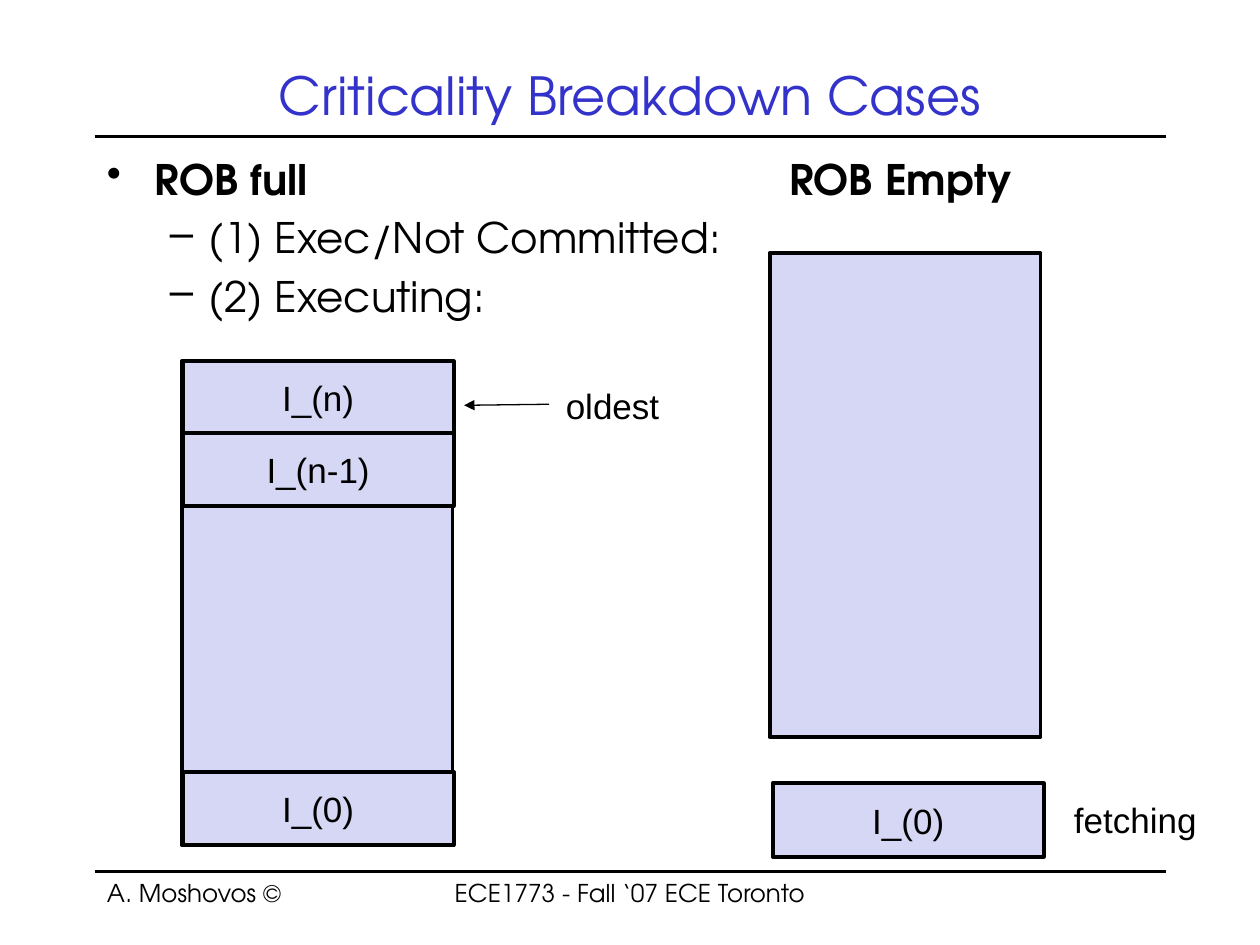
from lxml import etree
from pptx import Presentation
from pptx import util as u
from pptx.dml.color import RGBColor
from pptx.enum import shapes, text
from pptx.oxml.ns import qn

BLACK = RGBColor(0x00, 0x00, 0x00)
BLUE = RGBColor(0x33, 0x33, 0xCC)
LILAC = RGBColor(0xD6, 0xD6, 0xF5)
HEAD, BODY = "TeX Gyre Adventor", "Arial"
COLS, ROWS = 120, 90
LEFT, RIGHT, WIDTH = 9, 111, 102
BOX_W, BOX_H, ROB_H = 25.8, 7, 46.1
CENTER, MIDDLE = text.PP_ALIGN.CENTER, text.MSO_ANCHOR.MIDDLE


def write(p, words, size=20, font=BODY, color=BLACK, bold=False, align=None):
    """Add one formatted run to a paragraph."""
    r = p.add_run()
    r.text = words
    r.font.size, r.font.name, r.font.bold = u.Pt(size), font, bold
    r.font.color.rgb = color
    p.alignment = align


class Deck:
    """Hold the style and the current slide, measured on a 120 by 90 grid."""

    def __init__(self):
        self.prs = Presentation()
        self.prs.slide_width, self.prs.slide_height = u.Inches(10), u.Inches(7.5)
        self.s = self.prs.slides.add_slide(self.prs.slide_layouts[6])

    def grid(self, *cells):
        """Turn alternating columns and rows into lengths."""
        spans = (self.prs.slide_width / COLS, self.prs.slide_height / ROWS)
        return [u.Emu(round(c * spans[i % 2])) for i, c in enumerate(cells)]

    def line(self, x1, y1, x2, y2, weight=2.25, arrow=False):
        """Draw a straight line, with an arrowhead at its end if asked."""
        sp = self.s.shapes.add_connector(
            shapes.MSO_CONNECTOR.STRAIGHT, *self.grid(x1, y1, x2, y2))
        sp.line.color.rgb, sp.line.width = BLACK, u.Pt(weight)
        if arrow:
            etree.SubElement(sp.line._get_or_add_ln(), qn("a:tailEnd"), type="triangle")
        etree.SubElement(sp._element.spPr, qn("a:effectLst"))

    def box(self, x, y, w=BOX_W, h=BOX_H, label=None):
        """Draw a filled rectangle with an optional centred label."""
        sp = self.s.shapes.add_shape(shapes.MSO_SHAPE.RECTANGLE, *self.grid(x, y, w, h))
        sp.shadow.inherit = False
        sp.fill.solid()
        sp.fill.fore_color.rgb = LILAC
        sp.line.color.rgb, sp.line.width = BLACK, u.Pt(2.25)
        if label:
            sp.text_frame.vertical_anchor = MIDDLE
            write(sp.text_frame.paragraphs[0], label, align=CENTER)

    def frame(self, x, y, w, h, wrap=True, anchor=text.MSO_ANCHOR.TOP):
        """Add an empty text box and return its text frame."""
        tf = self.s.shapes.add_textbox(*self.grid(x, y, w, h)).text_frame
        tf.word_wrap, tf.vertical_anchor = wrap, anchor
        return tf

    def text(self, x, y, w, h, words, wrap=True, anchor=text.MSO_ANCHOR.TOP, **style):
        """Add a text box of one paragraph."""
        p = self.frame(x, y, w, h, wrap, anchor).paragraphs[0]
        write(p, words, **style)
        return p

    def bullets(self, x, y, w, h, items):
        """Add a bulleted list of level and text pairs."""
        tf = self.frame(x, y, w, h)
        for i, (level, words) in enumerate(items):
            p = tf.add_paragraph() if i else tf.paragraphs[0]
            mark, margin, indent = (("•", 0.38, -0.38), ("–", 0.81, -0.31))[level]
            p.level, p.space_before = level, u.Pt(4.8)
            pPr = p._p.get_or_add_pPr()
            pPr.set("marL", str(u.Inches(margin)))
            pPr.set("indent", str(u.Inches(indent)))
            etree.SubElement(pPr, qn("a:buChar"), char=mark)
            write(p, words, size=24, font=HEAD, bold=level == 0)

    def save(self):
        """Save the presentation."""
        self.prs.save("out.pptx")


def main():
    """Build the slide on reorder buffer cases."""
    d = Deck()
    for y in (13, 83):
        d.line(LEFT, y, RIGHT, y)
    d.text(LEFT, 5, WIDTH, 8, "Criticality Breakdown Cases", anchor=MIDDLE,
           size=30, font=HEAD, color=BLUE, align=CENTER)
    d.bullets(LEFT, 14, 65, 24, [
        (0, "ROB full"), (1, "(1) Exec/Not Committed:"), (1, "(2) Executing:")])
    p = d.text(74, 14, 37, 6, "ROB Empty", size=24, font=HEAD, bold=True)
    p.space_before = u.Pt(4.8)
    d.text(LEFT, 83, 25, 5, "A. Moshovos ©", size=14, font=HEAD)
    d.text(39, 83, 42, 5, "ECE1773 - Fall ‘07 ECE Toronto",
           size=14, font=HEAD, align=CENTER)

    full_x, full_y = 17.3, 34.4
    d.box(full_x, full_y, h=ROB_H)
    for y, label in ((full_y, "I_(n)"), (41.2, "I_(n-1)"), (73.5, "I_(0)")):
        d.box(full_x + 0.1, y, label=label)
    d.box(73.3, 24.1, h=ROB_H)
    d.box(73.6, 74.6, label="I_(0)")

    d.line(52.3, 38.5, 44.2, 38.6, weight=0.75, arrow=True)
    d.text(52.7, 36, 11.4, 5.3, "oldest", wrap=False)
    d.text(101.1, 75.5, 14.2, 5.3, "fetching", wrap=False)
    d.save()


if __name__ == "__main__":
    main()
